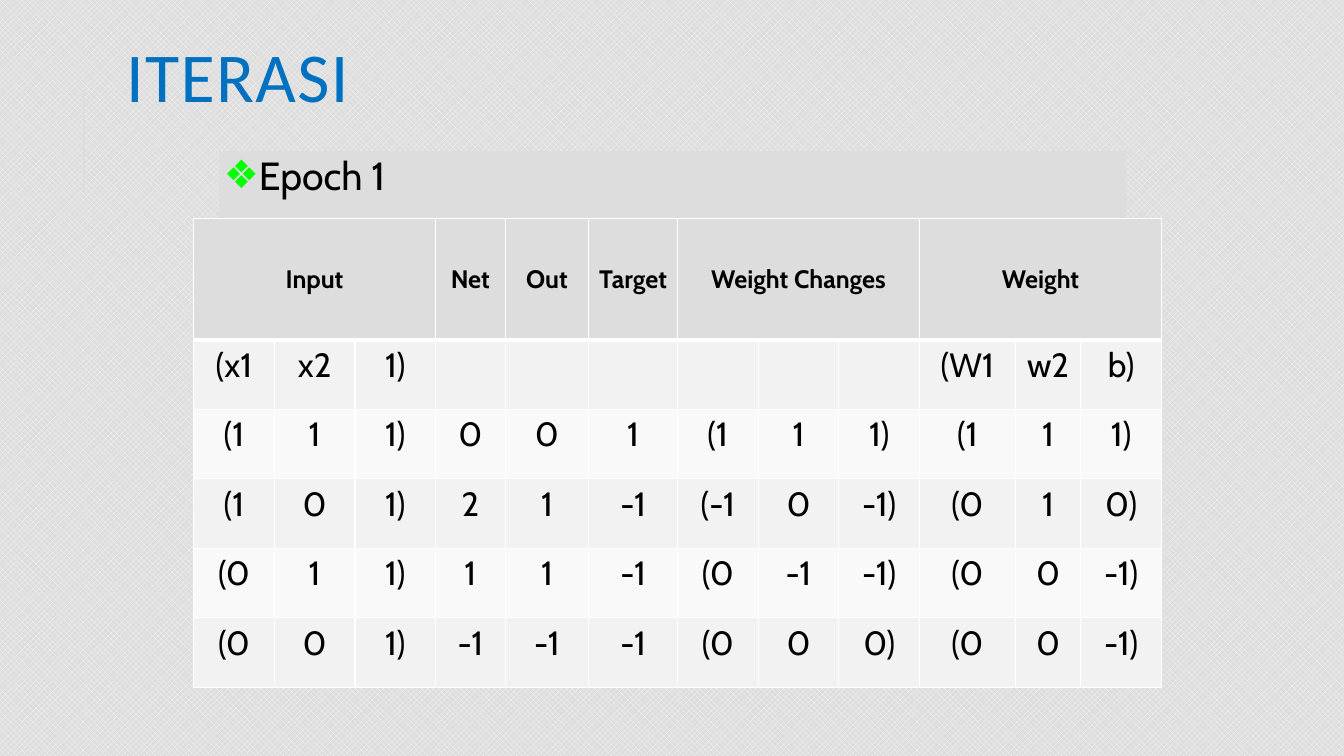
import pptx
import pptx.util
import pptx.dml.color
import pptx.enum.dml
import pptx.enum.text
import pptx.oxml
from lxml import etree

Inches, Pt = pptx.util.Inches, pptx.util.Pt
ALIGN = pptx.enum.text.PP_ALIGN
ANCHOR = pptx.enum.text.MSO_ANCHOR
NS = "http://schemas.openxmlformats.org/drawingml/2006/main"

COLORS = {
    "title": "0070C0",
    "text": "000000",
    "bullet": "00FF00",
    "panel": "DDDDDD",
    "dots": "F8F8F8",
    "border": "FFFFFF",
    "odd": "F2F2F2",
    "even": "F9F9F9",
}

WIDTHS = [0.8, 0.8, 0.8, 0.69, 0.83, 0.88, 0.8, 0.8, 0.8, 0.95, 0.65, 0.8]
HEIGHTS = [1.2] + [0.69] * 5
HEADS = {0: "Input", 3: "Net", 4: "Out", 5: "Target",
         6: "Weight Changes", 9: "Weight"}
GROUPS = (0, 6, 9)
ROWS = [
    ["(x1", "x2", "1)", "", "", "", "", "", "", "(W1", "w2", "b)"],
    ["(1", "1", "1)", "0", "0", "1", "(1", "1", "1)", "(1", "1", "1)"],
    ["(1", "0", "1)", "2", "1", "-1", "(-1", "0", "-1)", "(0", "1", "0)"],
    ["(0", "1", "1)", "1", "1", "-1", "(0", "-1", "-1)", "(0", "0", "-1)"],
    ["(0", "0", "1)", "-1", "-1", "-1", "(0", "0", "0)", "(0", "0", "-1)"],
]


def color(name):
    return pptx.dml.color.RGBColor.from_string(COLORS[name])


def style(para, size, name="Cabin", hue="text", bold=False):
    font = para.font
    font.name, font.size, font.bold = name, Pt(size), bold
    font.color.rgb = color(hue)


def place(shape, left, top, width, height):
    shape.left, shape.top = Inches(left), Inches(top)
    shape.width, shape.height = Inches(width), Inches(height)


def paint_back(slide):
    fill = slide.background.fill
    fill.patterned()
    fill.pattern = pptx.enum.dml.MSO_PATTERN.SOLID_DIAMOND
    fill.fore_color.rgb = color("dots")
    fill.back_color.rgb = color("panel")


def add_rule(slide):
    rule = slide.shapes.add_connector(
        pptx.enum.shapes.MSO_CONNECTOR.STRAIGHT,
        Inches(0.83), Inches(1.9), Inches(0.83), Inches(0.9))
    rule.line.color.rgb = color("panel")
    rule.line.width = Pt(1.5)
    etree.SubElement(rule._element.spPr, f"{{{NS}}}effectLst")


def set_title(title):
    place(title, 1.15, 0, 10.63, 1.64)
    frame = title.text_frame
    frame.text = "ITERASI"
    frame.vertical_anchor = ANCHOR.MIDDLE
    frame.auto_size = pptx.enum.text.MSO_AUTO_SIZE.NONE
    para = frame.paragraphs[0]
    para.alignment = ALIGN.LEFT
    para.line_spacing = 0.8
    style(para, 50, "Calibri", "title")
    para.runs[0]._r.get_or_add_rPr().set("spc", "100")


def add_bullet(para):
    props = para._p.get_or_add_pPr()
    props.set("marL", str(Inches(0.1)))
    props.set("indent", str(-Inches(0.1)))
    tint = etree.SubElement(props, f"{{{NS}}}buClr")
    etree.SubElement(tint, f"{{{NS}}}srgbClr", val=COLORS["bullet"])
    etree.SubElement(props, f"{{{NS}}}buChar", char="❖")


def set_body(body):
    place(body, 2.17, 1.5, 9, 5.2)
    body.fill.solid()
    body.fill.fore_color.rgb = color("panel")
    frame = body.text_frame
    frame.text = "Epoch 1"
    frame.auto_size = pptx.enum.text.MSO_AUTO_SIZE.NONE
    frame.margin_left = frame.margin_right = Inches(0.05)
    frame.margin_top = frame.margin_bottom = Inches(0.05)
    para = frame.paragraphs[0]
    add_bullet(para)
    para.line_spacing = 0.9
    para.space_before, para.space_after = Pt(0), Pt(2)
    style(para, 28)


def add_edges(cell, top, bottom):
    """Draw the four borders; top and bottom are widths in points."""
    props = cell._tc.get_or_add_tcPr()
    for side, width in zip("LRTB", (1, 1, top, bottom)):
        edge = etree.SubElement(props, f"{{{NS}}}ln{side}", w=str(Pt(width)))
        fill = etree.SubElement(edge, f"{{{NS}}}solidFill")
        etree.SubElement(fill, f"{{{NS}}}srgbClr", val=COLORS["border"])


def fill_cell(cell, text, row):
    head = row == 0
    add_edges(cell, 3 if row == 1 else 1, 3 if head else 1)
    cell.fill.solid()
    shade = "panel" if head else "odd" if row % 2 else "even"
    cell.fill.fore_color.rgb = color(shade)
    cell.vertical_anchor = ANCHOR.MIDDLE if head else ANCHOR.TOP
    if text:
        cell.text = text
        para = cell.text_frame.paragraphs[0]
        para.alignment = ALIGN.CENTER
        style(para, 18 if head else 24, bold=head)


def add_grid(slide):
    grid = slide.shapes.add_table(
        len(HEIGHTS), len(WIDTHS), Inches(1.92), Inches(2.17),
        Inches(sum(WIDTHS)), Inches(sum(HEIGHTS))).table
    for column, width in zip(grid.columns, WIDTHS):
        column.width = Inches(width)
    for row, height in zip(grid.rows, HEIGHTS):
        row.height = Inches(height)
    for start in GROUPS:
        grid.cell(0, start).merge(grid.cell(0, start + 2))
    heads = [HEADS.get(col, "") for col in range(len(WIDTHS))]
    for row, texts in enumerate([heads] + ROWS):
        for col, text in enumerate(texts):
            fill_cell(grid.cell(row, col), text, row)


def main():
    deck = pptx.Presentation()
    deck.slide_width, deck.slide_height = Inches(13.33), Inches(7.5)
    slide = deck.slides.add_slide(deck.slide_layouts[1])
    paint_back(slide)
    add_rule(slide)
    set_title(slide.shapes.title)
    set_body(slide.placeholders[1])
    add_grid(slide)
    deck.save("out.pptx")


if __name__ == "__main__":
    main()
